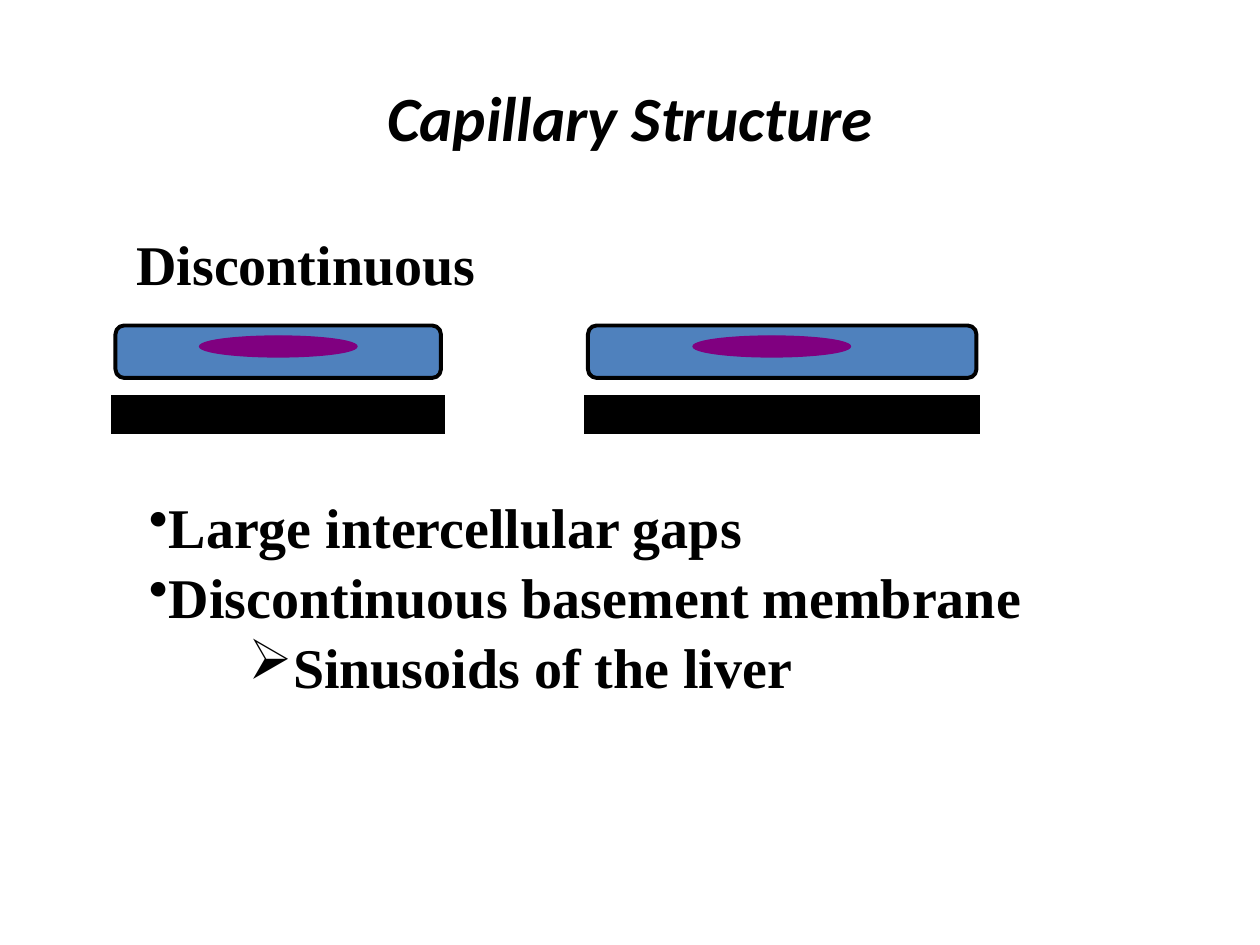
from lxml.etree import SubElement
from pptx import Presentation
from pptx.dml.color import RGBColor
from pptx.enum.shapes import MSO_SHAPE
from pptx.enum.text import MSO_ANCHOR, MSO_AUTO_SIZE, PP_ALIGN
from pptx.oxml.ns import qn
from pptx.util import Inches, Pt

COLORS = {"ink": "000000", "cell": "4F81BD", "nucleus": "800080"}
WIDTH, HEIGHT = 10, 7.5
COLUMNS, ROWS = 120, 90  # grid units of a twelfth of an inch


class CapillarySlide:
    heading_font = "Calibri"
    body_font = "Times New Roman"

    def __init__(self, deck):
        self.deck = deck
        self.slide = deck.slides.add_slide(deck.slide_layouts[5])

    def box(self, column, row, columns, rows):
        """Turn grid units into left, top, width and height."""
        across, down = self.deck.slide_width / COLUMNS, self.deck.slide_height / ROWS
        return [round(n) for n in (column * across, row * down, columns * across, rows * down)]

    def style(self, paragraph, font_name, size, italic=False):
        for run in paragraph.runs:
            font = run.font
            font.name, font.size = font_name, Pt(size)
            font.bold, font.italic = True, italic
            font.color.rgb = RGBColor.from_string(COLORS["ink"])

    def title(self, wording, *cells):
        title = self.slide.shapes.title
        title.left, title.top, title.width, title.height = self.box(*cells)
        frame = title.text_frame
        frame.text = wording
        frame.vertical_anchor = MSO_ANCHOR.MIDDLE
        frame.paragraphs[0].alignment = PP_ALIGN.CENTER
        self.style(frame.paragraphs[0], self.heading_font, 36, italic=True)

    def text(self, lines, *cells):
        """Add lines given as (wording, bullet or None, indent in inches)."""
        frame = self.slide.shapes.add_textbox(*self.box(*cells)).text_frame
        frame.word_wrap = True
        frame.auto_size = MSO_AUTO_SIZE.NONE
        frame.text = "\n".join(wording for wording, _, _ in lines)
        for paragraph, (_, bullet, indent) in zip(frame.paragraphs, lines):
            paragraph.space_before = Pt(1.6)
            self.style(paragraph, self.body_font, 32)
            if bullet:
                properties = paragraph._p.get_or_add_pPr()
                properties.set("marL", str(Inches(indent)))
                properties.set("indent", "0")
                SubElement(properties, qn("a:buChar")).set("char", bullet)
            if indent:
                paragraph.level = 2

    def shape(self, kind, fill, line, weight, *cells):
        shape = self.slide.shapes.add_shape(kind, *self.box(*cells))
        shape.shadow.inherit = False
        shape.fill.solid()
        shape.fill.fore_color.rgb = RGBColor.from_string(COLORS[fill])
        shape.line.color.rgb = RGBColor.from_string(COLORS[line])
        shape.line.width = Pt(weight)
        if kind == MSO_SHAPE.RECTANGLE:
            outline = shape.line._get_or_add_ln()
            SubElement(outline, qn("a:miter")).set("lim", "800000")

    def cell(self, left, width):
        """Draw an endothelial cell above its piece of basement membrane."""
        self.shape(MSO_SHAPE.ROUNDED_RECTANGLE, "cell", "ink", 2.25, left, 31, width, 5)
        self.shape(MSO_SHAPE.RECTANGLE, "ink", "ink", 4.5, left, 38, width, 3)

    def nucleus(self, left):
        self.shape(MSO_SHAPE.OVAL, "nucleus", "nucleus", 0.75, left, 32, 15, 2)


def main():
    deck = Presentation()
    deck.slide_width, deck.slide_height = Inches(WIDTH), Inches(HEIGHT)
    page = CapillarySlide(deck)
    page.title("Capillary Structure", 6, 3.6, 108, 15)
    page.text([("Discontinuous", None, 0)], 11.8, 21.3, 36, 7.5)
    for left, width in ((11, 31), (56, 37)):
        page.cell(left, width)
    page.text(
        [
            ("Large intercellular gaps", "•", 0),
            ("Discontinuous basement membrane", "•", 0),
            ("Sinusoids of the liver", "➢", 0.79),
        ],
        13, 46.3, 90, 20.4,
    )
    for left in (19, 66):
        page.nucleus(left)
    deck.save("out.pptx")


if __name__ == "__main__":
    main()
